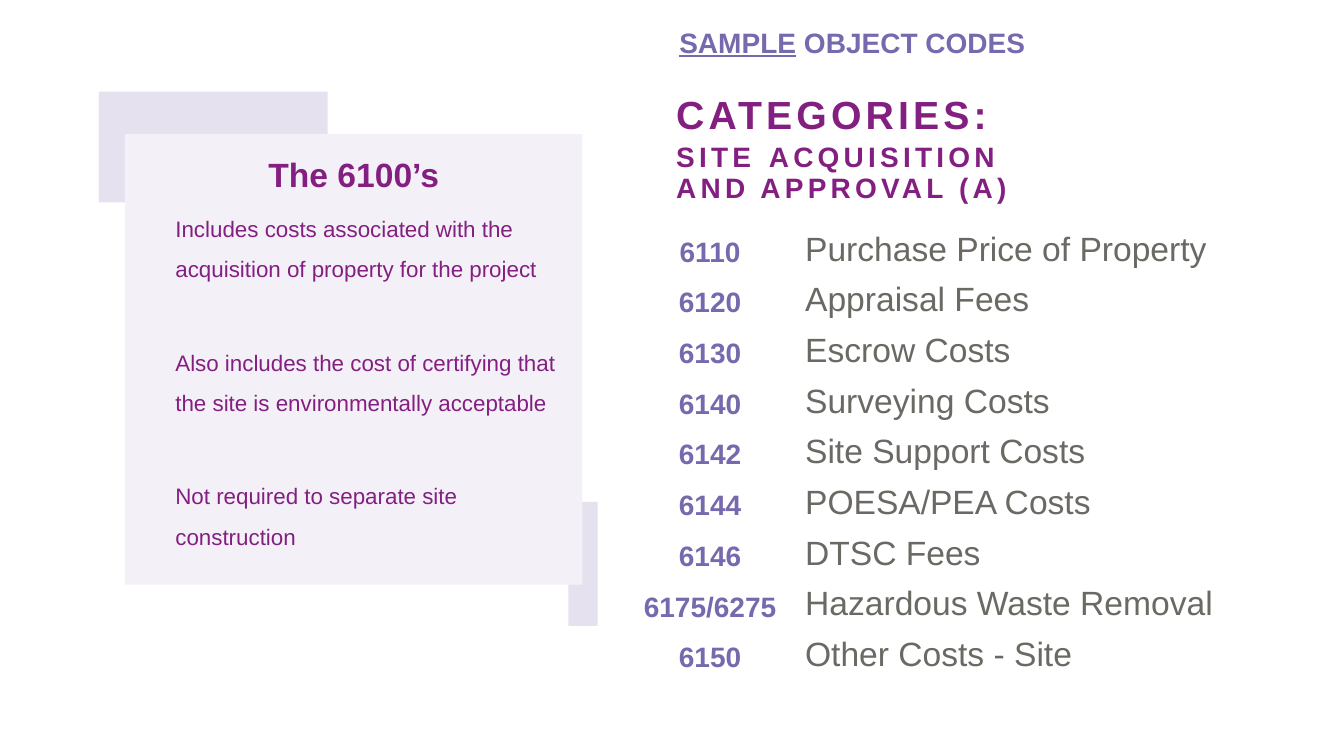
from lxml import etree
from pptx import Presentation
from pptx.dml.color import RGBColor
from pptx.enum.shapes import MSO_SHAPE
from pptx.enum.text import MSO_ANCHOR, MSO_AUTO_SIZE, PP_ALIGN
from pptx.oxml.ns import qn
from pptx.util import Cm, Pt

RECTANGLE = MSO_SHAPE.RECTANGLE
TOP, BOTTOM = MSO_ANCHOR.TOP, MSO_ANCHOR.BOTTOM
LEFT, CENTER = PP_ALIGN.LEFT, PP_ALIGN.CENTER
NO_AUTOFIT = MSO_AUTO_SIZE.NONE
COLORS = {
    "plum": "841F82",
    "violet": "7769AE",
    "gray": "6B6963",
    "lilac": "C5B9D9",
    "panel": "F3F1F7",
}
OBJECT_CODES = [
    ("6110", "Purchase Price of Property"),
    ("6120", "Appraisal Fees"),
    ("6130", "Escrow Costs"),
    ("6140", "Surveying Costs"),
    ("6142", "Site Support Costs"),
    ("6144", "POESA/PEA Costs"),
    ("6146", "DTSC Fees"),
    ("6175/6275", "Hazardous Waste Removal"),
    ("6150", "Other Costs - Site"),
]
NOTES = [
    "Includes costs associated with the acquisition of property for the project",
    "Also includes the cost of certifying that the site is environmentally acceptable",
    "Not required to separate site construction",
]


def style_font(font, size, color, bold):
    font.name = "Arial"
    font.size = Pt(size)
    font.bold = bold
    font.color.rgb = RGBColor.from_string(COLORS[color])


def set_up_placeholder(shape, left, top, width, height):
    """Place a placeholder and let its text start at the top left corner."""
    shape.left, shape.top, shape.width, shape.height = left, top, width, height
    frame = shape.text_frame
    frame.margin_left = frame.margin_top = frame.margin_right = frame.margin_bottom = 0
    frame.vertical_anchor = TOP
    frame.word_wrap = True
    frame.auto_size = NO_AUTOFIT
    return frame


presentation = Presentation()
presentation.slide_width = Cm(33.87)
presentation.slide_height = Cm(19.05)
slide = presentation.slides.add_slide(presentation.slide_layouts[1])
title, body = slide.placeholders
shape_tree = title.element.getparent()

# Translucent accents behind the panel
accents = [(2.49, 2.31, 5.77, 2.79, 0), (13.13, 13.84, 3.12, 0.74, 90)]
for left, top, width, height, rotation in accents:
    accent = slide.shapes.add_shape(RECTANGLE, Cm(left), Cm(top), Cm(width), Cm(height))
    accent.rotation = rotation
    accent.shadow.inherit = False
    accent.line.fill.background()
    accent.fill.solid()
    accent.fill.fore_color.rgb = RGBColor.from_string(COLORS["lilac"])
    color = accent.element.spPr.find(qn("a:solidFill"))[0]
    etree.SubElement(color, qn("a:alpha"), val="42000")
    shape_tree.insert(shape_tree.index(title.element), accent.element)

# Title
title_frame = set_up_placeholder(title, Cm(17.04), Cm(2.41), Cm(14.83), Cm(2.06))
paragraph = title_frame.paragraphs[0]
paragraph.alignment = LEFT
paragraph.line_spacing = 0.9
style_font(paragraph.font, 20, "plum", True)
title_lines = [
    [("CATEGORIES:", 28)],
    [("SITE", 20), (" ", 24), ("ACQUISITION", 20)],
    [("AND APPROVAL (A)", 20)],
]
for index, line in enumerate(title_lines):
    if index:
        paragraph.add_line_break()
    for text, size in line:
        run = paragraph.add_run()
        run.text = text
        run.font.size = Pt(size)
for properties in title.element.iter(qn("a:rPr")):
    properties.set("spc", "300")

# Panel on the 6100 series
body_frame = set_up_placeholder(body, Cm(3.15), Cm(3.38), Cm(11.53), Cm(11.35))
body.fill.solid()
body.fill.fore_color.rgb = RGBColor.from_string(COLORS["panel"])
for index, text in enumerate(["The 6100’s"] + NOTES):
    is_heading = index == 0
    paragraph = body_frame.paragraphs[0] if is_heading else body_frame.add_paragraph()
    paragraph.text = text
    paragraph.level = 0 if is_heading else 1
    properties = paragraph._p.get_or_add_pPr()
    properties.set("marL", str(0 if is_heading else Cm(1.27)))
    properties.set("indent", "0")
    etree.SubElement(properties, qn("a:buNone"))
    paragraph.alignment = CENTER if is_heading else LEFT
    paragraph.line_spacing = 1.5
    paragraph.space_before = Pt((0, 5, 38, 38)[index])
    style_font(paragraph.font, 24 if is_heading else 16, "plum", is_heading)

# Heading above the title
heading = slide.shapes.add_textbox(Cm(16.87), Cm(0.51), Cm(12.78), Cm(1.12))
heading.text_frame.word_wrap = True
paragraph = heading.text_frame.paragraphs[0]
style_font(paragraph.font, 20, "violet", True)
sample = paragraph.add_run()
sample.text = "SAMPLE"
sample.font.underline = True
paragraph.add_run().text = " OBJECT CODES"

# Object codes
row_height = Cm(1.27)
table = slide.shapes.add_table(
    len(OBJECT_CODES), 2, Cm(15.8), Cm(5.61), Cm(18.39), row_height * len(OBJECT_CODES)
).table
table.first_row = False
table.horz_banding = False
table.columns[0].width = Cm(4.19)
table.columns[1].width = Cm(14.2)
column_styles = [(CENTER, 20, "violet", True), (LEFT, 24, "gray", False)]
for row, entry in zip(table.rows, OBJECT_CODES):
    row.height = row_height
    for cell, text, (alignment, *font_style) in zip(row.cells, entry, column_styles):
        cell.fill.background()
        cell.vertical_anchor = BOTTOM
        cell.margin_left = cell.margin_right = Cm(0.3)
        cell.margin_top = cell.margin_bottom = Cm(0.13)
        cell.text = text
        paragraph = cell.text_frame.paragraphs[0]
        paragraph.alignment = alignment
        style_font(paragraph.font, *font_style)

presentation.save("out.pptx")
